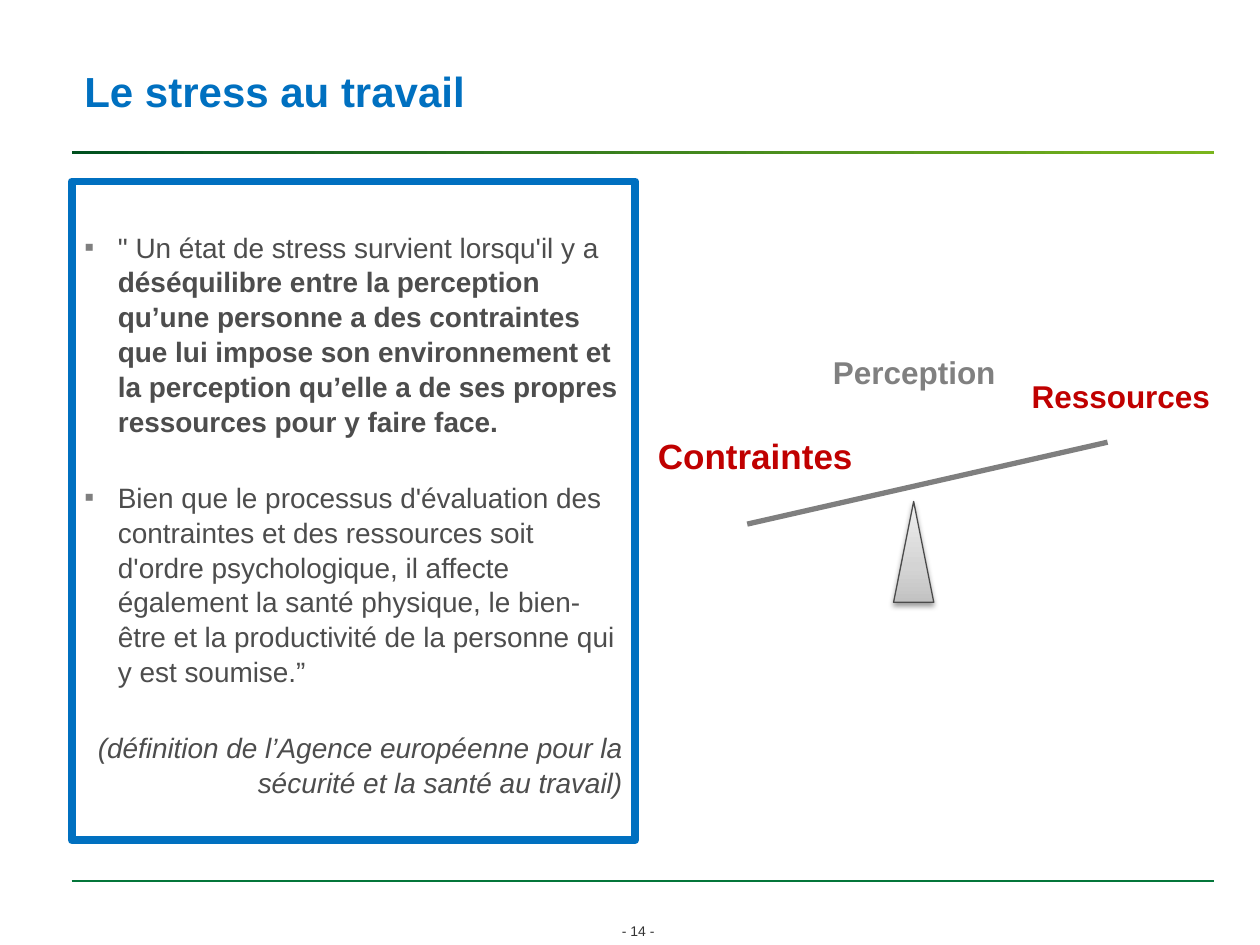
import copy

import pptx
import pptx.dml.color
import pptx.enum.shapes
import pptx.enum.text
import pptx.oxml
import pptx.oxml.ns
import pptx.util

Pt = pptx.util.Pt
qn = pptx.oxml.ns.qn
ALIGN = pptx.enum.text.PP_ALIGN
SHAPE = pptx.enum.shapes.MSO_SHAPE
NS = pptx.oxml.ns.nsdecls("a")
BLUE, RED, TEXT_GREY, MID_GREY = "0070C0", "C00000", "4D4D4D", "7F7F7F"
LEFT, WIDTH = 41, 652.5


def rgb(value):
    """Return the colour for a hex string."""
    return pptx.dml.color.RGBColor.from_string(value)


def place(part, left, top, width, height):
    """Move and size a part, in points."""
    part.left, part.top = Pt(left), Pt(top)
    part.width, part.height = Pt(width), Pt(height)


def outline(part, color, width):
    """Set the line of a part."""
    part.line.color.rgb = rgb(color)
    part.line.width = Pt(width)


def format_run(run, size, color, bold=False, italic=False):
    """Set the font of a run."""
    run.font.name, run.font.size = "Arial", Pt(size)
    run.font.bold, run.font.italic = bold, italic
    run.font.color.rgb = rgb(color)


def add_label(slide, text, box, size, color, bold=True, border=None):
    """Add a centred label, with a border if a colour is given."""
    label = slide.shapes.add_textbox(*map(Pt, box))
    label.text_frame.word_wrap = True
    paragraph = label.text_frame.paragraphs[0]
    paragraph.text = text
    paragraph.alignment = ALIGN.CENTER
    format_run(paragraph.runs[0], size, color, bold)
    if border:
        outline(label, border, 3)


def add_line(slide, start, end, color, width):
    """Add a straight line without shadow."""
    line = slide.shapes.add_connector(
        pptx.enum.shapes.MSO_CONNECTOR.STRAIGHT, *map(Pt, start + end))
    outline(line, color, width)
    line.element.spPr.append(pptx.oxml.parse_xml(f"<a:effectLst {NS}/>"))


def add_gradient_shape(slide, kind, box, stops, angle):
    """Add a preset shape with a linear gradient and no shadow."""
    shape = slide.shapes.add_shape(kind, *map(Pt, box))
    shape.shadow.inherit = False
    shape.line.fill.background()
    shape.fill.gradient()
    shape.fill.gradient_angle = angle
    stop_list = shape.element.find(".//" + qn("a:gsLst"))
    for _ in stops[2:]:
        stop_list.append(copy.deepcopy(stop_list[0]))
    for stop, (position, color) in zip(shape.fill.gradient_stops, stops):
        stop.position = position
        stop.color.rgb = rgb(color)
    return shape


def add_shadow(shape, blur, distance, opacity):
    """Give a shape a black shadow that falls downwards."""
    shape.element.spPr.find(qn("a:effectLst")).append(pptx.oxml.parse_xml(
        f'<a:outerShdw {NS} blurRad="{Pt(blur)}" dist="{Pt(distance)}" '
        f'dir="5400000" rotWithShape="0"><a:srgbClr val="000000">'
        f'<a:alpha val="{opacity * 1000}"/></a:srgbClr></a:outerShdw>'))


def set_bullet(paragraph, bulleted):
    """Set a square bullet with a hanging indent, or no bullet."""
    properties = paragraph._p.get_or_add_pPr()
    indent = Pt(19.2) if bulleted else 0
    properties.set("marL", str(indent))
    properties.set("indent", str(-indent))
    marks = [f"<a:buNone {NS}/>"]
    if bulleted:
        marks = [f'<a:buClr {NS}><a:srgbClr val="{MID_GREY}"/></a:buClr>',
                 f'<a:buFont {NS} typeface="Arial"/>',
                 f'<a:buChar {NS} char="▪"/>']
    for mark in marks:
        properties.append(pptx.oxml.parse_xml(mark))


def fill_title(title):
    """Write the slide title."""
    place(title, LEFT, 26, WIDTH, 55.5)
    title.text_frame.text = "Le stress au travail"
    title.text_frame.vertical_anchor = pptx.enum.text.MSO_ANCHOR.MIDDLE
    title.text_frame.auto_size = pptx.enum.text.MSO_AUTO_SIZE.NONE
    heading = title.text_frame.paragraphs[0]
    heading.alignment = ALIGN.LEFT
    heading.line_spacing = 0.9
    format_run(heading.runs[0], 24, BLUE, bold=True)


def fill_definition(definition):
    """Write the framed definition and its source."""
    place(definition, LEFT, 103.7, 322, 376.5)
    outline(definition, BLUE, 4.5)
    frame = definition.text_frame
    frame.auto_size = pptx.enum.text.MSO_AUTO_SIZE.NONE
    frame.margin_top = Pt(27)
    passages = [
        [("\" Un état de stress survient lorsqu'il y a ", {}),
         ("déséquilibre entre la perception qu’une personne a des contraintes "
          "que lui impose son environnement et la perception qu’elle a de ses "
          "propres ressources pour y faire face.", {"bold": True})],
        [("Bien que le processus d'évaluation des contraintes et des "
          "ressources soit d'ordre psychologique, il affecte également la "
          "santé physique, le bien-être et la productivité de la personne qui "
          "y est soumise.”", {})],
        [("(définition de l’Agence européenne pour la sécurité et la santé au "
          "travail)", {"italic": True})],
    ]
    for index, passage in enumerate(passages):
        is_source = index == len(passages) - 1
        paragraph = frame.add_paragraph() if index else frame.paragraphs[0]
        paragraph.alignment = ALIGN.RIGHT if is_source else ALIGN.LEFT
        paragraph.line_spacing = 1.04
        paragraph.space_before = Pt(23.2 if index else 0)
        set_bullet(paragraph, not is_source)
        for text, style in passage:
            run = paragraph.add_run()
            run.text = text
            format_run(run, 16, TEXT_GREY, **style)


def add_balance(slide):
    """Draw the tilted balance and its labels."""
    add_label(slide, "Perception", (441.4, 198, 162, 29), 18, "808080")
    add_label(slide, "Ressources", (574.6, 211.7, 131.8, 29), 18, RED,
              border="FFFFFF")
    pivot = add_gradient_shape(
        slide, SHAPE.ISOSCELES_TRIANGLE, (510.6, 286.6, 23, 57.6),
        [(0, "C2C2C2"), (0.35, "D4D4D4"), (1, "EFEFEF")], 90)
    outline(pivot, "4B4B4B", 0.75)
    add_shadow(pivot, 3.1, 1.6, 38)
    add_line(slide, (427, 299.5), (632.9, 252.7), MID_GREY, 3)
    add_label(slide, "Contraintes", (368.6, 244.8, 126, 31.7), 20, RED,
              border="FFFFFF")


def main():
    """Build the slide and save it."""
    deck = pptx.Presentation()
    deck.slide_width, deck.slide_height = Pt(720), Pt(540)
    slide = deck.slides.add_slide(deck.slide_layouts[1])
    add_label(slide, "- 14 -", (341.3, 523.4, 46.8, 16.6), 8, "333333",
              bold=False)
    add_line(slide, (LEFT, 503.5), (LEFT + WIDTH, 503.5), "04763A", 0.75)
    add_gradient_shape(slide, SHAPE.RECTANGLE, (LEFT, 86.2, WIDTH, 1.7),
                       [(0, "00501F"), (1, "7AB51D")], 0)
    fill_title(slide.shapes.title)
    fill_definition(slide.placeholders[1])
    add_balance(slide)
    deck.save("out.pptx")


if __name__ == "__main__":
    main()
